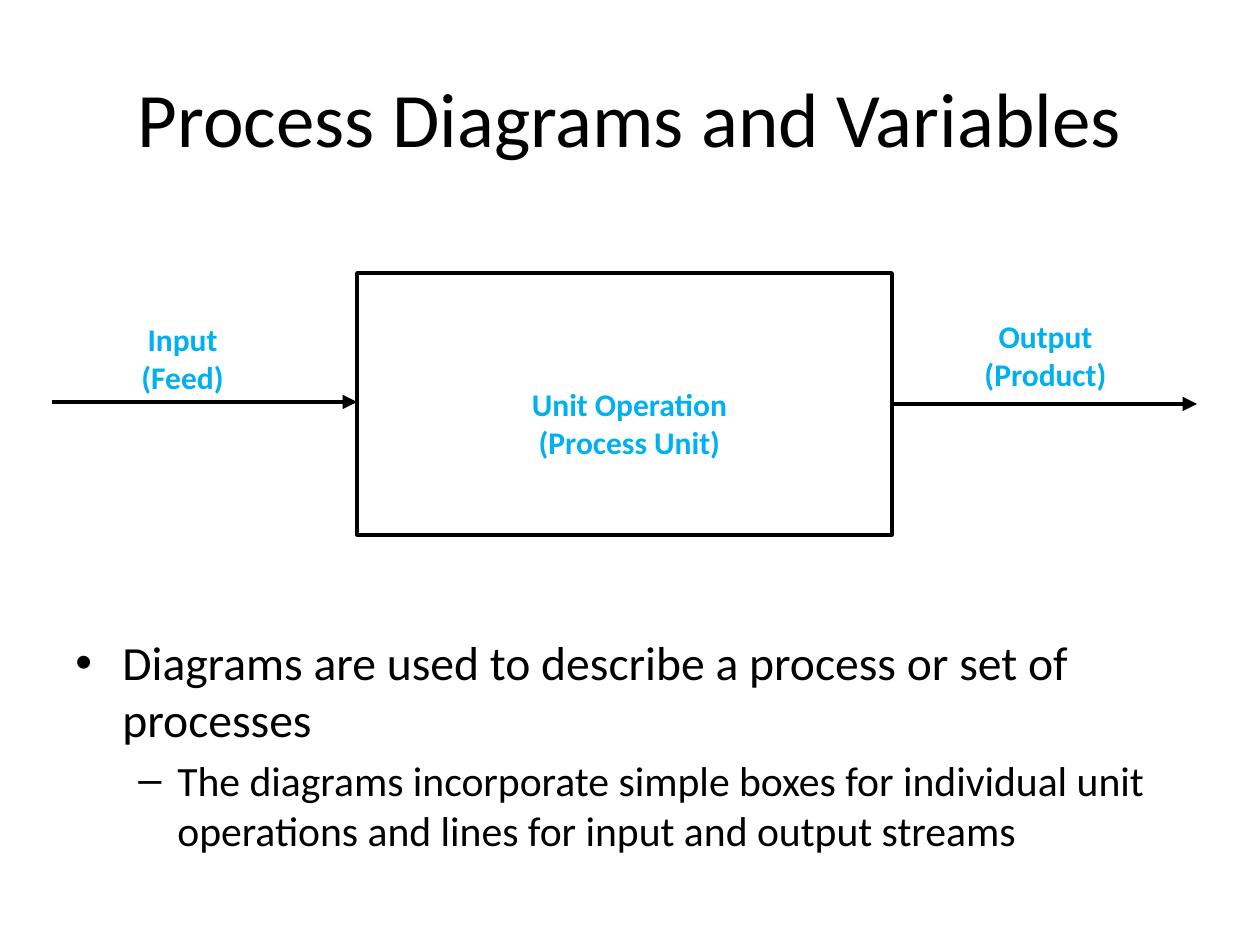
"""Build a slide showing a unit operation with its input and output streams."""
from lxml import etree
from pptx import Presentation
from pptx import util as u
from pptx.dml.color import RGBColor
from pptx.enum import shapes, text
from pptx.oxml.ns import qn

PX = u.Inches(1) // 126
COLOURS = {"ink": "000000", "label": "00B0F0"}
TITLE = "Process Diagrams and Variables"
TITLE_BOX = (63, 38, 1134, 157)
UNIT_BOX = (357, 273, 535, 262)
LABELS = [
    (("Unit Operation", "(Process Unit)"), (514, 379)),
    (("Input", "(Feed)"), (67, 314)),
    (("Output", "(Product)"), (930, 311)),
]
LABEL_SIZE = (231, 89)
STREAMS = [((892, 404), (1197, 404)), ((52, 402), (357, 402))]
POINTS_BOX = (63, 627, 1134, 194)
POINTS = [
    dict(words="Diagrams are used to describe a process or set of processes",
         bullet="•", size=27.2, margin=47, hanging=47, before=3),
    dict(words="The diagrams incorporate simple boxes for individual unit "
               "operations and lines for input and output streams",
         bullet="–", size=23.8, margin=102, hanging=39, before=4),
]


def emu(lengths):
    return [length * PX for length in lengths]


def colour(name):
    return RGBColor.from_string(COLOURS[name])


def set_all(target, values):
    for name, value in values.items():
        setattr(target, name, value)


def style_font(font, size, ink="ink", bold=False):
    set_all(font, dict(name="Calibri", size=u.Pt(size), bold=bold))
    font.color.rgb = colour(ink)


def style_line(line, width):
    line.color.rgb = colour("ink")
    line.width = u.Pt(width)


def add_text(slide, box, lines):
    frame = slide.shapes.add_textbox(*emu(box)).text_frame
    frame.word_wrap = True
    frame.text = "\n".join(lines)
    return frame


def add_label(slide, lines, corner):
    frame = add_text(slide, corner + LABEL_SIZE, lines)
    for paragraph in frame.paragraphs:
        paragraph.alignment = text.PP_ALIGN.CENTER
        style_font(paragraph.runs[0].font, 18, "label", True)


def add_stream(slide, start, end):
    stream = slide.shapes.add_connector(
        shapes.MSO_CONNECTOR.STRAIGHT, *emu(start + end))
    style_line(stream.line, 2.75)
    etree.SubElement(stream.line._get_or_add_ln(), qn("a:tailEnd"), type="triangle")
    etree.SubElement(stream._element.spPr, qn("a:effectLst"))


def add_points(slide):
    frame = add_text(slide, POINTS_BOX, [point["words"] for point in POINTS])
    for level, (paragraph, point) in enumerate(zip(frame.paragraphs, POINTS)):
        set_all(paragraph, dict(level=level, space_before=u.Pt(point["before"])))
        style_font(paragraph.runs[0].font, point["size"])
        properties = paragraph._p.get_or_add_pPr()
        properties.set("marL", str(point["margin"] * PX))
        properties.set("indent", str(-point["hanging"] * PX))
        etree.SubElement(properties, qn("a:buFont"), typeface="Arial")
        etree.SubElement(properties, qn("a:buChar"), char=point["bullet"])


def main():
    deck = Presentation()
    set_all(deck, dict(slide_width=1260 * PX, slide_height=945 * PX))
    slide = deck.slides.add_slide(deck.slide_layouts[5])

    title = slide.shapes.title
    set_all(title, dict(zip(("left", "top", "width", "height"), emu(TITLE_BOX))))
    title.text_frame.text = TITLE
    title.text_frame.vertical_anchor = text.MSO_ANCHOR.MIDDLE
    heading = title.text_frame.paragraphs[0]
    heading.alignment = text.PP_ALIGN.CENTER
    style_font(heading.runs[0].font, 44)

    add_points(slide)
    unit = slide.shapes.add_shape(shapes.MSO_SHAPE.RECTANGLE, *emu(UNIT_BOX))
    unit.shadow.inherit = False
    unit.fill.background()
    style_line(unit.line, 2)

    for start, end in STREAMS:
        add_stream(slide, start, end)
    for lines, corner in LABELS:
        add_label(slide, lines, corner)
    deck.save("out.pptx")


if __name__ == "__main__":
    main()
